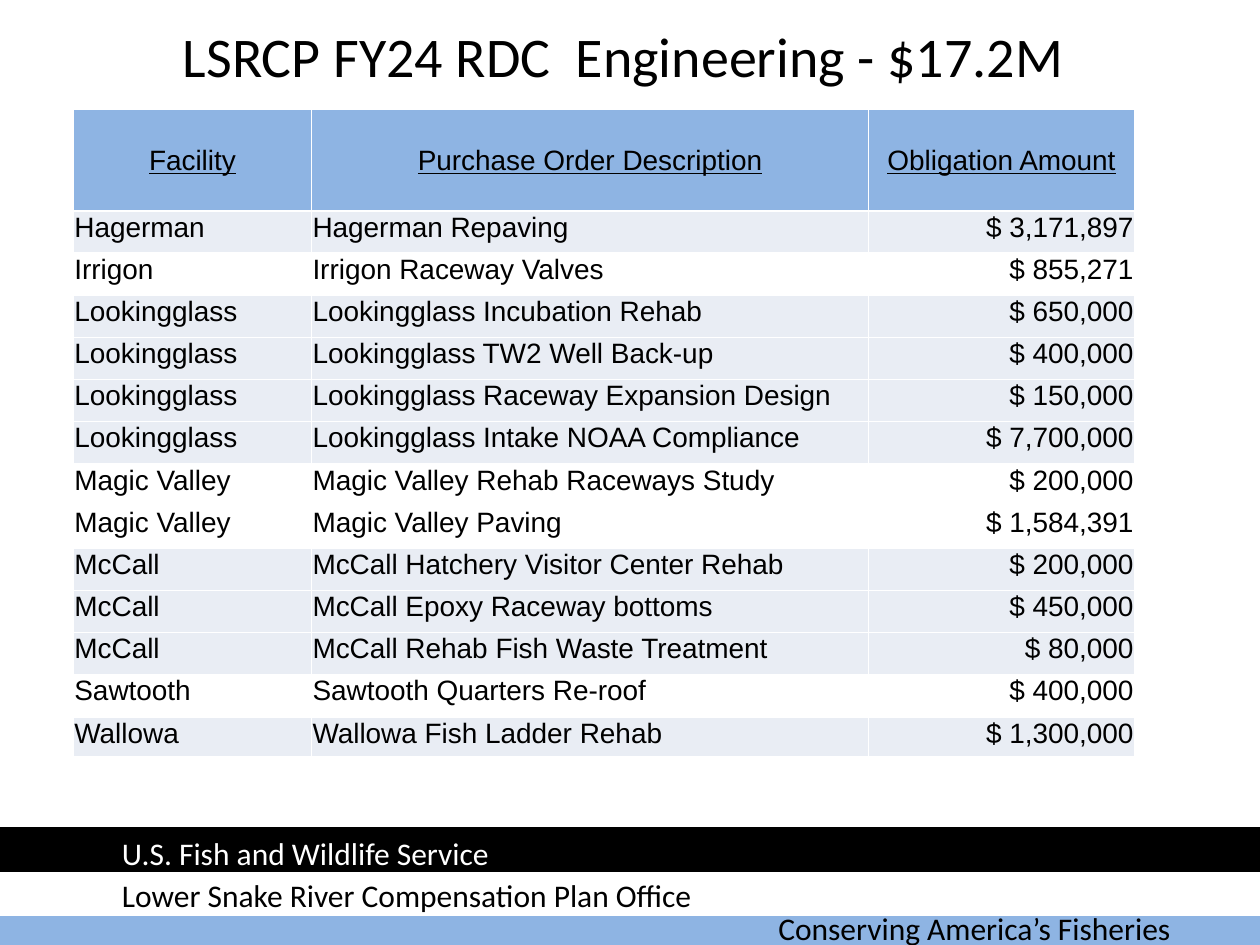
import itertools

import lxml.etree
import pptx
import pptx.dml.color
import pptx.enum.shapes
import pptx.enum.text
import pptx.oxml.ns
import pptx.util

Cm = pptx.util.Cm
Pt = pptx.util.Pt
ALIGN = pptx.enum.text.PP_ALIGN
ANCHOR = pptx.enum.text.MSO_ANCHOR
COLORS = {"blue": "8EB4E3", "band": "E9EDF4", "white": "FFFFFF", "black": "000000"}


def rgb(name):
    return pptx.dml.color.RGBColor.from_string(COLORS[name])


def write(frame, text, align, color, **font_format):
    paragraph = frame.paragraphs[0]
    paragraph.text = text
    paragraph.alignment = align
    font = paragraph.runs[0].font
    for attribute, value in font_format.items():
        setattr(font, attribute, value)
    font.color.rgb = rgb(color)


deck = pptx.Presentation()
deck.slide_width = Cm(25.4)
deck.slide_height = Cm(19.05)
slide = deck.slides.add_slide(deck.slide_layouts[5])

footer_bars = [(-0.02, 18.21, "blue"), (0, 17.6, "white"), (0, 16.71, "black")]
for left, top, color in footer_bars:
    bar = slide.shapes.add_shape(
        pptx.enum.shapes.MSO_SHAPE.RECTANGLE, Cm(left), Cm(top), Cm(25.4), Cm(0.84)
    )
    bar.shadow.inherit = False
    bar.fill.solid()
    bar.fill.fore_color.rgb = rgb(color)
    bar.line.color.rgb = rgb(color)
    bar.line.width = Pt(2)

footer_lines = [
    ("Conserving America’s Fisheries", 15.44, 18.21, 9.32, "black"),
    ("U.S. Fish and Wildlife Service", 2.21, 16.69, 10.57, "white"),
    ("Lower Snake River Compensation Plan Office", 2.21, 17.53, 12.62, "black"),
]
for text, left, top, width, color in footer_lines:
    footer = slide.shapes.add_textbox(Cm(left), Cm(top), Cm(width), Cm(1.02))
    footer.text_frame.word_wrap = True
    footer.text_frame.auto_size = pptx.enum.text.MSO_AUTO_SIZE.SHAPE_TO_FIT_TEXT
    write(footer.text_frame, text, ALIGN.LEFT, color, name="Calibri", size=Pt(18))

heading = slide.shapes.title
heading_place = {"left": Cm(1.07), "top": Cm(0), "width": Cm(23), "height": Cm(2.21)}
for attribute, value in heading_place.items():
    setattr(heading, attribute, value)
heading.text_frame.vertical_anchor = ANCHOR.MIDDLE
write(heading.text_frame, "LSRCP FY24 RDC  Engineering - $17.2M", ALIGN.CENTER,
      "black", name="Calibri", size=Pt(32))

headers = ("Facility", "Purchase Order Description", "Obligation Amount")
orders = [
    ("Hagerman", "Hagerman Repaving", "$ 3,171,897"),
    ("Irrigon", "Irrigon Raceway Valves", "$ 855,271"),
    ("Lookingglass", "Lookingglass Incubation Rehab", "$ 650,000"),
    ("Lookingglass", "Lookingglass TW2 Well Back-up", "$ 400,000"),
    ("Lookingglass", "Lookingglass Raceway Expansion Design", "$ 150,000"),
    ("Lookingglass", "Lookingglass Intake NOAA Compliance", "$ 7,700,000"),
    ("Magic Valley", "Magic Valley Rehab Raceways Study", "$ 200,000"),
    ("Magic Valley", "Magic Valley Paving", "$ 1,584,391"),
    ("McCall", "McCall Hatchery Visitor Center Rehab", "$ 200,000"),
    ("McCall", "McCall Epoxy Raceway bottoms", "$ 450,000"),
    ("McCall", "McCall Rehab Fish Waste Treatment", "$ 80,000"),
    ("Sawtooth", "Sawtooth Quarters Re-roof", "$ 400,000"),
    ("Wallowa", "Wallowa Fish Ladder Rehab", "$ 1,300,000"),
]
row_fills = ["blue"]
facilities = itertools.groupby(orders, key=lambda order: order[0])
for (facility, group), band in zip(facilities, itertools.cycle(("band", "white"))):
    row_fills += [band for order in group]

column_widths = (4.8, 11.23, 5.36)
row_heights = [2.04] + [0.85] * 12 + [0.8]
obligations = slide.shapes.add_table(
    len(row_heights), len(column_widths), Cm(1.48), Cm(2.21),
    Cm(sum(column_widths)), Cm(sum(row_heights))
).table
obligations.horz_banding = False
for column, width in zip(obligations.columns, column_widths):
    column.width = Cm(width)
for row, height in zip(obligations.rows, row_heights):
    row.height = Cm(height)

cell_format = {"margin_left": Cm(0.02), "margin_right": Cm(0.02),
               "margin_top": Cm(0.02), "margin_bottom": Cm(0)}
qn = pptx.oxml.ns.qn
for r, values in enumerate([headers] + orders):
    is_header = r == 0
    for c, value in enumerate(values):
        cell = obligations.cell(r, c)
        for attribute, setting in cell_format.items():
            setattr(cell, attribute, setting)
        cell.vertical_anchor = ANCHOR.MIDDLE if is_header else ANCHOR.TOP
        properties = cell._tc.get_or_add_tcPr()
        for side in ("a:lnL", "a:lnR", "a:lnT", "a:lnB"):
            border = lxml.etree.SubElement(properties, qn(side), w=str(Pt(1)))
            paint = lxml.etree.SubElement(border, qn("a:solidFill"))
            lxml.etree.SubElement(paint, qn("a:srgbClr"), val=COLORS["white"])
        cell.fill.solid()
        cell.fill.fore_color.rgb = rgb(row_fills[r])
        align = ALIGN.CENTER if is_header else (ALIGN.LEFT, ALIGN.LEFT, ALIGN.RIGHT)[c]
        write(cell.text_frame, value, align, "black", name="Arial", size=Pt(16),
              bold=False, underline=is_header)

deck.save("out.pptx")
